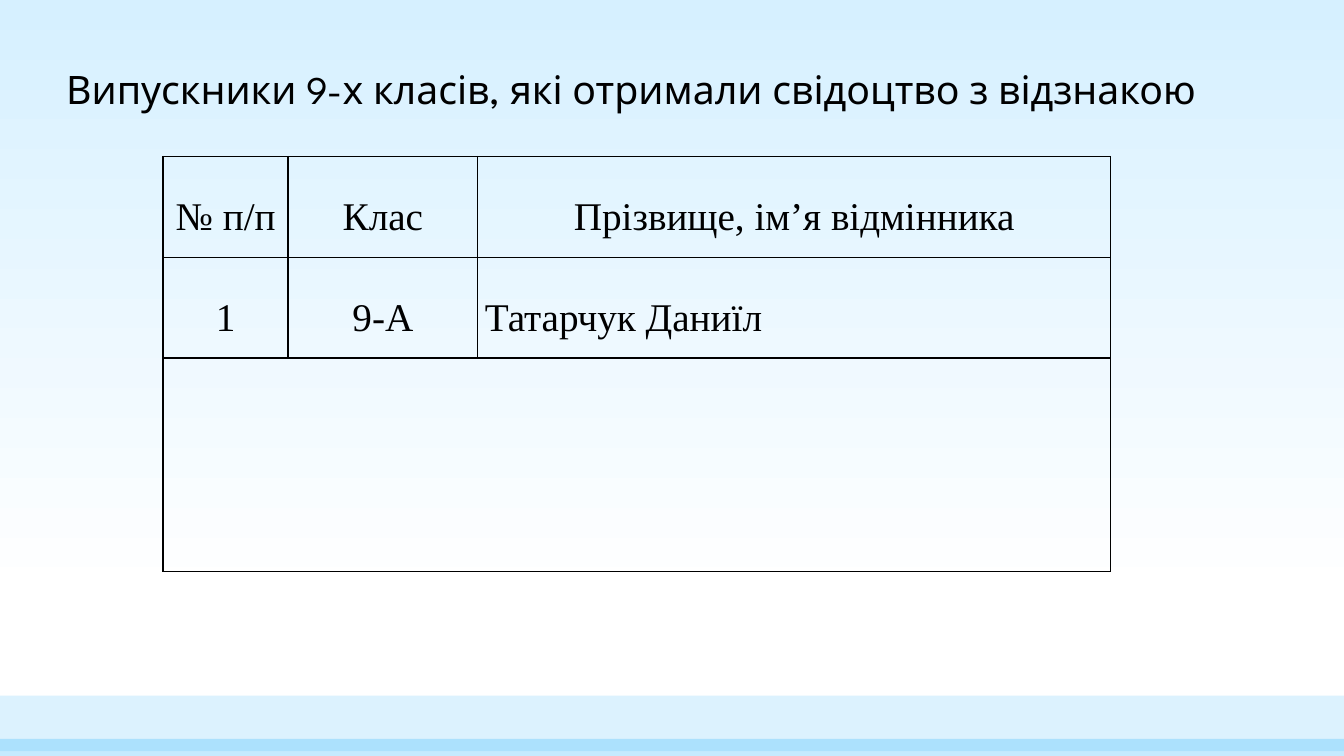
import pptx
import pptx.util
import pptx.dml.color
import pptx.enum.shapes
import pptx.enum.text
import pptx.oxml
import pptx.oxml.ns
from pptx.util import Cm

THEME = {
    "ink": "000000", "band": "31B6FD", "sky": "D6F0FF", "white": "FFFFFF",
    "title_font": "League Spartan", "table_font": "Times New Roman",
    "size": 28, "border": 1,
}
WIDTH, HEIGHT = 33.87, 19.05

TITLE = "Випускники 9-х класів, які отримали свідоцтво з відзнакою"
TITLE_BOX = (1.42, 1.22, 31.42, 1.75)
ROWS = [
    ("№ п/п", "Клас", "Прізвище, ім’я відмінника"),
    ("1", "9-А", "Татарчук Даниїл"),
    ("", "", ""),
]
TABLE_LEFT, TABLE_TOP = 4.11, 3.94
COL_WIDTHS = (3.15, 4.78, 15.95)
ROW_HEIGHTS = (2.54, 2.54, 5.38)
# top, height, opacity in percent
BANDS = [(17.53, 1.4, 17), (18.62, 0.43, 28)]

ALIGN = pptx.enum.text.PP_ALIGN
ANCHOR = pptx.enum.text.MSO_ANCHOR


def rgb(name):
    return pptx.dml.color.RGBColor.from_string(THEME[name])


def style(p, font, spacing, align):
    p.line_spacing = spacing
    p.alignment = align
    for r in p.runs:
        r.font.name = THEME[font]
        r.font.size = pptx.util.Pt(THEME["size"])
        r.font.color.rgb = rgb("ink")


def add_border(cell):
    """Draw a solid line on all four sides of a cell."""
    tc_pr = cell._tc.get_or_add_tcPr()
    width = pptx.util.Pt(THEME["border"])
    for i, side in enumerate(("lnL", "lnR", "lnT", "lnB")):
        tc_pr.insert(i, pptx.oxml.parse_xml(
            f'<a:{side} {pptx.oxml.ns.nsdecls("a")} w="{width}"><a:solidFill>'
            f'<a:srgbClr val="{THEME["ink"]}"/></a:solidFill></a:{side}>'))


def add_background(s):
    fill = s.background.fill
    fill.gradient()
    fill.gradient_angle = 270
    for stop, (position, color) in zip(fill.gradient_stops, [(0, "sky"), (0.79, "white")]):
        stop.position = position
        stop.color.rgb = rgb(color)


def add_band(s, top, height, opacity):
    sp = s.shapes.add_shape(pptx.enum.shapes.MSO_SHAPE.RECTANGLE,
                            0, Cm(top), Cm(WIDTH), Cm(height))
    sp.shadow.inherit = False
    sp.line.fill.background()
    sp.fill.solid()
    sp.fill.fore_color.rgb = rgb("band")
    color = sp._element.spPr.find(".//" + pptx.oxml.ns.qn("a:srgbClr"))
    color.append(pptx.oxml.parse_xml(
        f'<a:alpha {pptx.oxml.ns.nsdecls("a")} val="{opacity * 1000}"/>'))


def add_title(s):
    tf = s.shapes.add_textbox(*map(Cm, TITLE_BOX)).text_frame
    tf.word_wrap = True
    tf.vertical_anchor = ANCHOR.BOTTOM
    tf.text = TITLE
    style(tf.paragraphs[0], "title_font", 0.9, ALIGN.LEFT)


def add_graduates(s):
    table = s.shapes.add_table(
        len(ROWS), len(COL_WIDTHS), Cm(TABLE_LEFT), Cm(TABLE_TOP),
        Cm(sum(COL_WIDTHS)), Cm(sum(ROW_HEIGHTS))).table
    table.first_row = table.horz_banding = False
    for col, width in zip(table.columns, COL_WIDTHS):
        col.width = Cm(width)
    for row, height in zip(table.rows, ROW_HEIGHTS):
        row.height = Cm(height)
    for i, texts in enumerate(ROWS):
        for j, text in enumerate(texts):
            cell = table.cell(i, j)
            cell.text = text
            cell.fill.background()
            cell.vertical_anchor = ANCHOR.MIDDLE
            cell.margin_left = cell.margin_right = Cm(0.18)
            cell.margin_top = cell.margin_bottom = 0
            is_name = i > 0 and j == 2
            style(cell.text_frame.paragraphs[0], "table_font", 1.5,
                  ALIGN.LEFT if is_name else ALIGN.CENTER)
            add_border(cell)
    table.cell(2, 0).merge(table.cell(2, 2))


def main():
    prs = pptx.Presentation()
    prs.slide_width, prs.slide_height = Cm(WIDTH), Cm(HEIGHT)
    s = prs.slides.add_slide(prs.slide_layouts[6])
    add_background(s)
    for band in BANDS:
        add_band(s, *band)
    add_title(s)
    add_graduates(s)
    prs.save("out.pptx")


if __name__ == "__main__":
    main()
